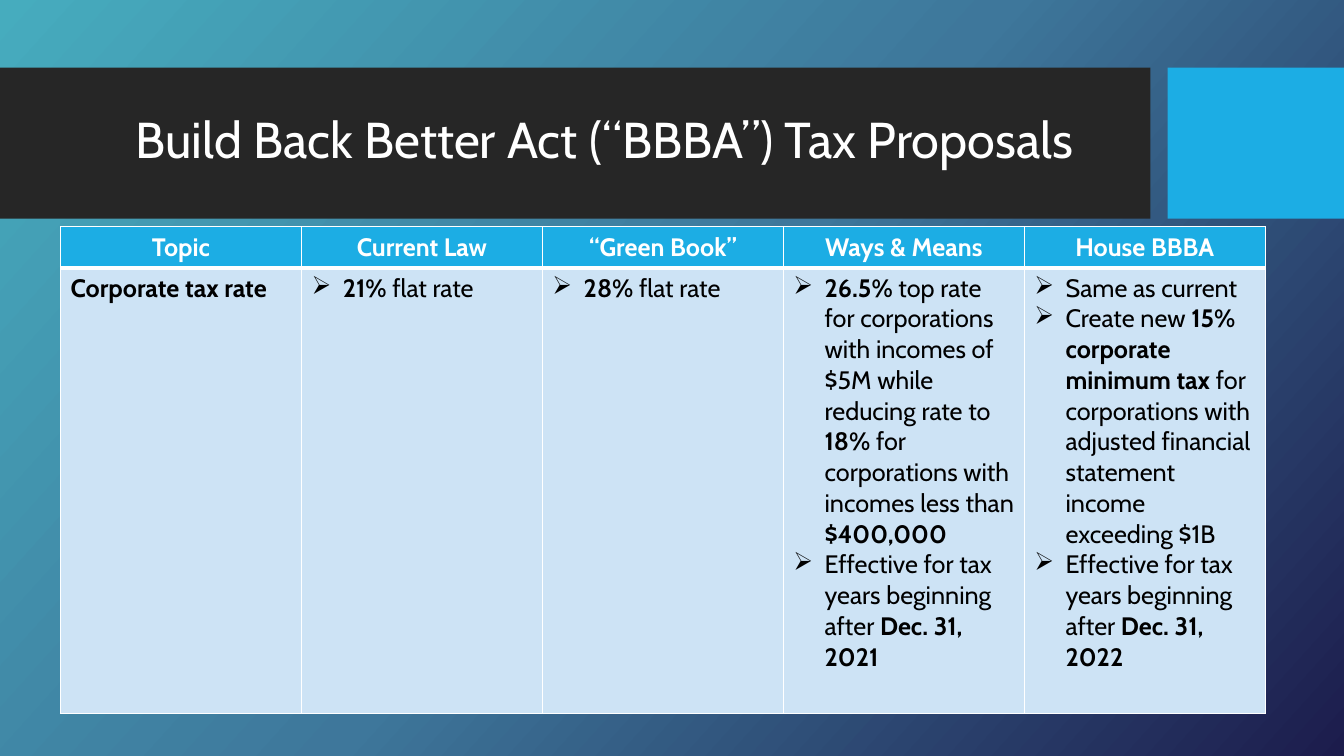
from copy import deepcopy

from lxml import etree
from pptx import Presentation
from pptx.dml.color import RGBColor
from pptx.enum.shapes import MSO_SHAPE
from pptx.enum.text import MSO_ANCHOR, MSO_AUTO_SIZE, PP_ALIGN
from pptx.oxml.ns import qn
from pptx.util import Pt

PX = 9144  # EMU in one px, at 100 px to the inch
FONT = "Cabin"
WHITE = RGBColor(0xFF, 0xFF, 0xFF)
BLACK = RGBColor(0x00, 0x00, 0x00)
CHARCOAL = RGBColor(0x26, 0x26, 0x26)
BLUE = RGBColor(0x1C, 0xAD, 0xE4)
PALE_BLUE = RGBColor(0xCD, 0xE3, 0xF5)
GRADIENT = [
    (0, RGBColor(0x46, 0xAC, 0xBE)),
    (0.5, RGBColor(0x3E, 0x77, 0x9B)),
    (1, RGBColor(0x1C, 0x1C, 0x4C)),
]
RECTANGLE = MSO_SHAPE.RECTANGLE
CENTER, LEFT = PP_ALIGN.CENTER, PP_ALIGN.LEFT
MIDDLE = MSO_ANCHOR.MIDDLE
NO_AUTOFIT = MSO_AUTO_SIZE.NONE

HEADINGS = ["Topic", "Current Law", "“Green Book”", "Ways & Means", "House BBBA"]
# Words between double asterisks are bold
PROPOSALS = [
    ["**Corporate tax rate**"],
    ["**21%** flat rate"],
    ["**28%** flat rate"],
    [
        "**26.5%** top rate for corporations with incomes of $5M while reducing rate to "
        "**18%** for corporations with incomes less than **$400,000**",
        "Effective for tax years beginning after **Dec. 31, 2021**",
    ],
    [
        "Same as current",
        "Create new **15% corporate minimum tax** for corporations with adjusted "
        "financial statement income exceeding $1B",
        "Effective for tax years beginning after **Dec. 31, 2022**",
    ],
]


def write_text(frame, lines, size=18, color=BLACK, align=LEFT, bullet=None):
    for number, line in enumerate(lines):
        paragraph = frame.add_paragraph() if number else frame.paragraphs[0]
        paragraph.alignment = align
        if bullet:
            properties = paragraph._p.get_or_add_pPr()
            properties.set("marL", str(31 * PX))
            properties.set("indent", str(-31 * PX))
            etree.SubElement(properties, qn("a:buChar"), char=bullet)
        for index, words in enumerate(line.split("**")):
            if words:
                run = paragraph.add_run()
                run.text = words
                run.font.name = FONT
                run.font.size = Pt(size)
                run.font.bold = index % 2 == 1
                run.font.color.rgb = color


def format_cell(cell, fill, top, bottom):
    cell.fill.solid()
    cell.fill.fore_color.rgb = fill
    properties = cell._tc.get_or_add_tcPr()
    borders = [("a:lnL", 1), ("a:lnR", 1), ("a:lnT", top), ("a:lnB", bottom)]
    for position, (side, width) in enumerate(borders):
        border = etree.Element(qn(side), w=str(Pt(width)))
        solid = etree.SubElement(border, qn("a:solidFill"))
        etree.SubElement(solid, qn("a:srgbClr"), val=str(WHITE))
        properties.insert(position, border)


presentation = Presentation()
presentation.slide_width = 1333 * PX
presentation.slide_height = 750 * PX
slide = presentation.slides.add_slide(presentation.slide_layouts[5])

# Background gradient
background = slide.background.fill
background.gradient()
background.gradient_angle = 360 - 42
stop_list = slide.element.find(".//" + qn("a:gsLst"))
stop_list.append(deepcopy(stop_list[0]))
for stop, (position, color) in zip(background.gradient_stops, GRADIENT):
    stop.position = position
    stop.color.rgb = color

# Title band and accent block
for left, width, color in [(0, 1141, CHARCOAL), (1158, 175, BLUE)]:
    band = slide.shapes.add_shape(RECTANGLE, left * PX, 67 * PX, width * PX, 150 * PX)
    band.shadow.inherit = False
    band.fill.solid()
    band.fill.fore_color.rgb = color
    band.line.fill.background()

# Title, brought in front of the band
title = slide.shapes.title
title.left, title.top, title.width, title.height = 74 * PX, 82 * PX, 1051 * PX, 118 * PX
title.text_frame.auto_size = NO_AUTOFIT
title.text_frame.vertical_anchor = MIDDLE
write_text(title.text_frame, ["Build Back Better Act (“BBBA”) Tax Proposals"],
           size=36, color=WHITE, align=CENTER)
title.text_frame.paragraphs[0].line_spacing = 0.9
slide.shapes.element.append(title.element)

# Comparison table
table = slide.shapes.add_table(2, len(HEADINGS), 60 * PX, 225 * PX, 1195 * PX, 482 * PX).table
table.rows[0].height = 40 * PX
table.rows[1].height = 442 * PX
for column, (heading, proposal) in enumerate(zip(HEADINGS, PROPOSALS)):
    table.columns[column].width = 239 * PX
    heading_cell, proposal_cell = table.cell(0, column), table.cell(1, column)
    format_cell(heading_cell, BLUE, top=1, bottom=3)
    format_cell(proposal_cell, PALE_BLUE, top=3, bottom=1)
    write_text(heading_cell.text_frame, [f"**{heading}**"], color=WHITE, align=CENTER)
    write_text(proposal_cell.text_frame, proposal, bullet="➢" if column else None)

presentation.save("out.pptx")
